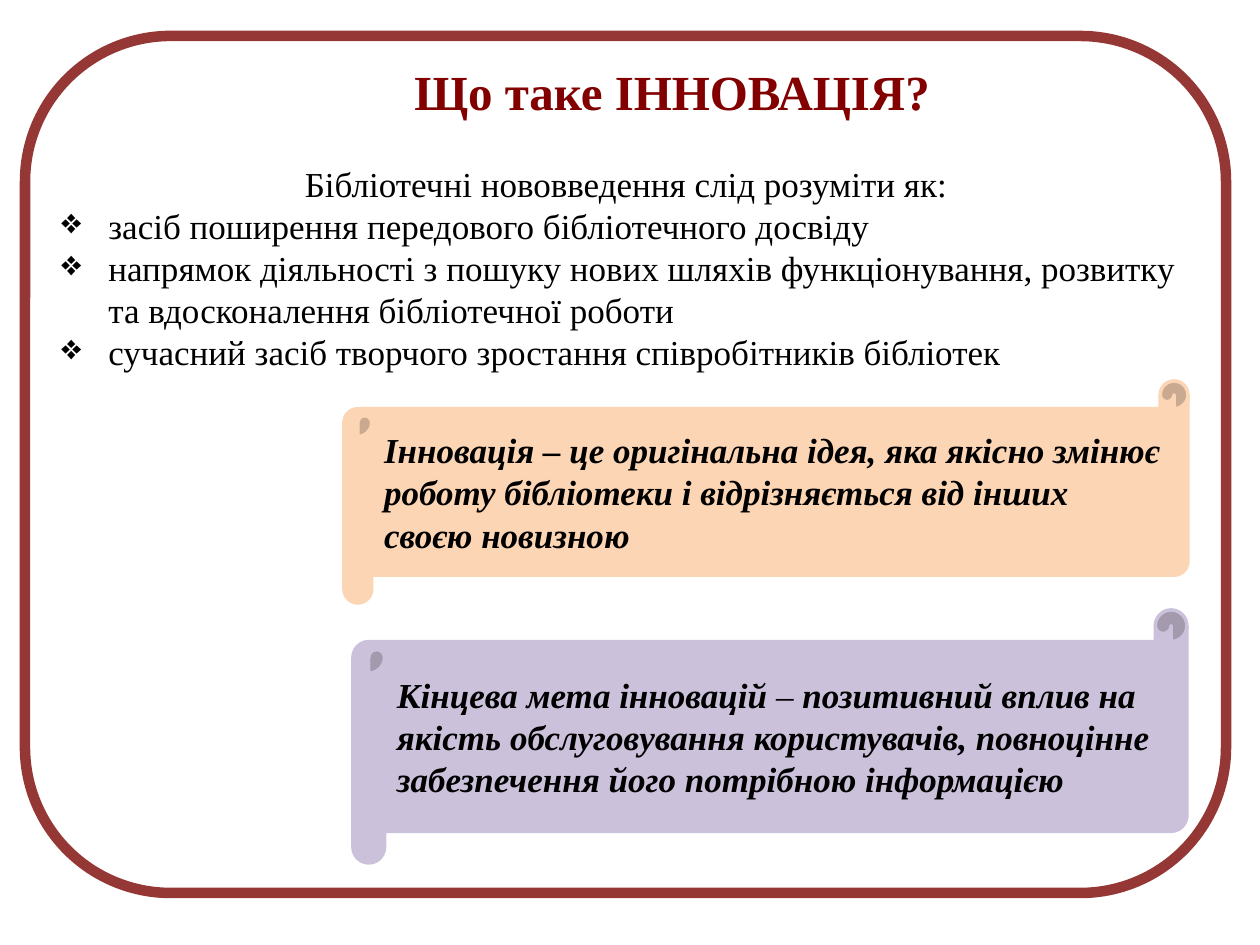
"""Builds the slide that explains what a library innovation is."""
from lxml.etree import SubElement
from pptx import Presentation
from pptx.dml.color import RGBColor
from pptx.enum.shapes import MSO_SHAPE as SHAPE
from pptx.enum.text import MSO_ANCHOR as ANCHOR, PP_ALIGN as ALIGN
from pptx.oxml.ns import qn
from pptx.util import Emu, Pt

PX = 914400 / 126


def px(*values):
    return [Emu(round(v * PX)) for v in values]


def add_run(p, text, size, color="000000", bold=False, italic=False):
    r = p.add_run()
    r.text = text
    r.font.name = "Times New Roman"
    r.font.size = Pt(size)
    r.font.bold = bold
    r.font.italic = italic
    r.font.color.rgb = RGBColor.from_string(color)


prs = Presentation()
prs.slide_width, prs.slide_height = px(1260, 945)
s = prs.slides.add_slide(prs.slide_layouts[6])

frame = s.shapes.add_shape(SHAPE.ROUNDED_RECTANGLE, *px(25, 36, 1201, 857))
frame.adjustments[0] = 0.17
title = s.shapes.add_textbox(*px(402, 44, 558, 93))
body = s.shapes.add_textbox(*px(49, 156, 1154, 224))
idea = s.shapes.add_shape(SHAPE.HORIZONTAL_SCROLL, *px(344, 381, 844, 222))
goal = s.shapes.add_shape(SHAPE.HORIZONTAL_SCROLL, *px(353, 610, 834, 253))

for sp, fill, line, width in [
    (frame, "FFFFFF", "953734", 6),
    (idea, "FCD5B5", "FCD5B5", 2),
    (goal, "CCC1DA", "CCC1DA", 2),
]:
    sp.shadow.inherit = False
    sp.fill.solid()
    sp.fill.fore_color.rgb = RGBColor.from_string(fill)
    sp.line.color.rgb = RGBColor.from_string(line)
    sp.line.width = Pt(width)

tf = title.text_frame
tf.word_wrap = True
tf.vertical_anchor = ANCHOR.MIDDLE
add_run(tf.paragraphs[0], "Що таке ІННОВАЦІЯ?", 28, "820000", bold=True)

tf = body.text_frame
tf.word_wrap = True
p = tf.paragraphs[0]
p.alignment = ALIGN.CENTER
add_run(p, "Бібліотечні нововведення слід розуміти як:", 20)
indent = px(47)[0]
for text in [
    "засіб поширення передового бібліотечного досвіду",
    "напрямок діяльності з пошуку нових шляхів функціонування, розвитку "
    "та вдосконалення бібліотечної роботи",
    "сучасний засіб творчого зростання співробітників бібліотек",
]:
    p = tf.add_paragraph()
    pPr = p._p.get_or_add_pPr()
    pPr.set("marL", str(indent))
    pPr.set("indent", str(-indent))
    SubElement(pPr, qn("a:buChar"), char="❖")
    add_run(p, text, 20)

for sp, parts in [
    (idea, [
        ("Інновація – це оригінальна ідея, яка якісно змінює роботу "
         "бібліотеки і відрізняється від інших своєю новизною", True),
    ]),
    (goal, [
        ("Кінцева мета інновацій ", True),
        ("– ", False),
        ("позитивний вплив на якість обслуговування користувачів, "
         "повноцінне забезпечення його потрібною інформацією", True),
    ]),
]:
    tf = sp.text_frame
    tf.word_wrap = True
    tf.vertical_anchor = ANCHOR.MIDDLE
    p = tf.paragraphs[0]
    p.alignment = ALIGN.LEFT
    for text, strong in parts:
        add_run(p, text, 20, bold=strong, italic=strong)

prs.save("out.pptx")
